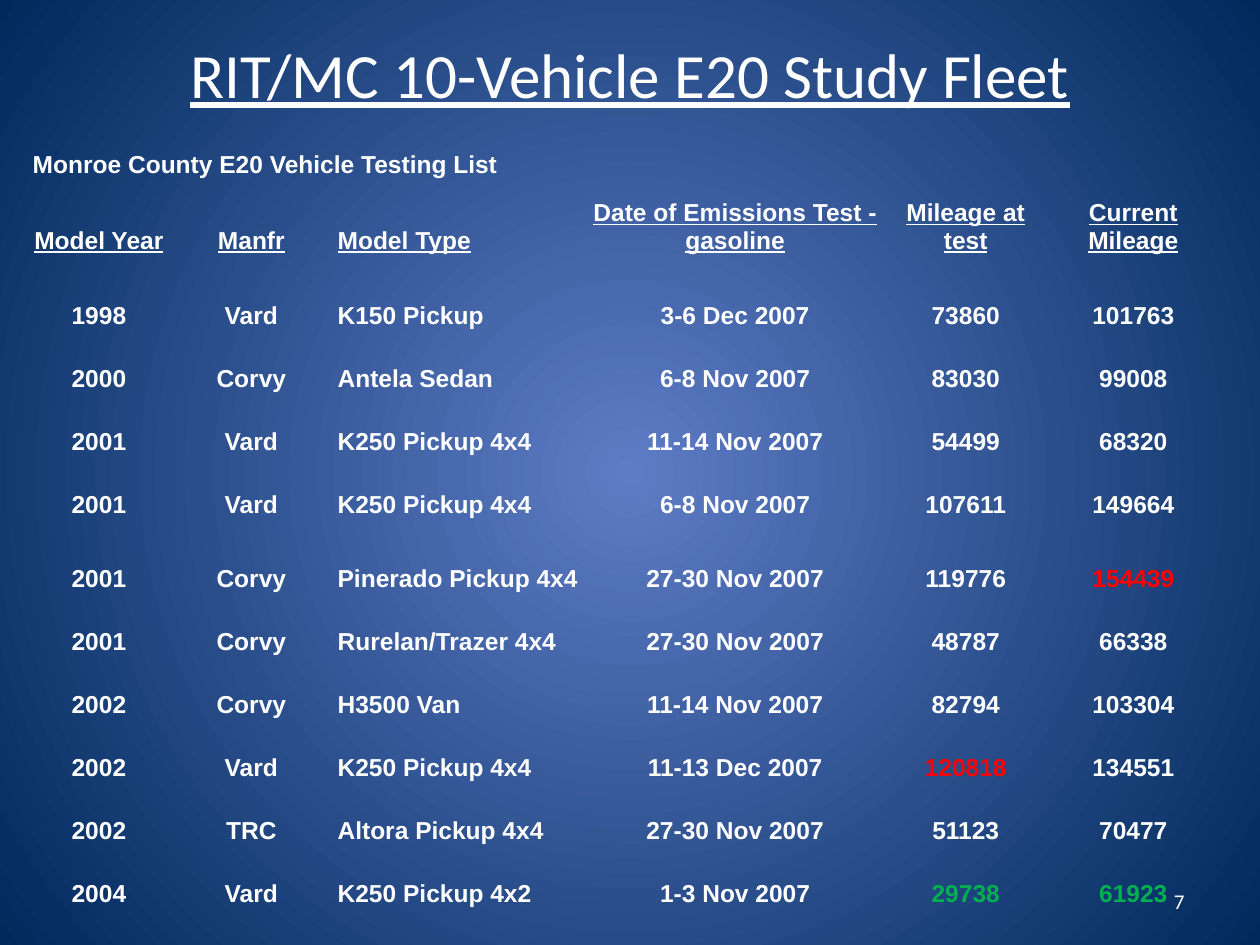
from lxml.etree import SubElement
from pptx import Presentation
from pptx.dml.color import RGBColor
from pptx.enum.text import MSO_ANCHOR, PP_ALIGN
from pptx.oxml.ns import qn
from pptx.util import Inches, Pt

THEME = {
    "white": "FFFFFF", "red": "FF0000", "green": "00B050",
    "centre": "5E7CC5", "edge": "00295C",
    "title_size": 36, "table_size": 14, "number_size": 12,
    "title_font": "Calibri", "table_font": "Arial",
}
NO_STYLE_NO_GRID = "{2D5ABB26-0587-4C30-8999-92F81FD0307C}"

HEADERS = ["Model Year", "Manfr", "Model Type", "Date of Emissions Test - gasoline",
           "Mileage at test", "Current Mileage"]
VEHICLES = [
    ["1998", "Vard", "K150 Pickup", "3-6 Dec 2007", "73860", "101763"],
    ["2000", "Corvy", "Antela Sedan", "6-8 Nov 2007", "83030", "99008"],
    ["2001", "Vard", "K250 Pickup 4x4", "11-14 Nov 2007", "54499", "68320"],
    ["2001", "Vard", "K250 Pickup 4x4", "6-8 Nov 2007", "107611", "149664"],
    ["2001", "Corvy", "Pinerado Pickup 4x4", "27-30 Nov 2007", "119776", "154439"],
    ["2001", "Corvy", "Rurelan/Trazer 4x4", "27-30 Nov 2007", "48787", "66338"],
    ["2002", "Corvy", "H3500 Van", "11-14 Nov 2007", "82794", "103304"],
    ["2002", "Vard", "K250 Pickup 4x4", "11-13 Dec 2007", "120818", "134551"],
    ["2002", "TRC", "Altora Pickup 4x4", "27-30 Nov 2007", "51123", "70477"],
    ["2004", "Vard", "K250 Pickup 4x2", "1-3 Nov 2007", "29738", "61923"],
]
HIGHLIGHTS = {"154439": "red", "120818": "red", "29738": "green", "61923": "green"}
COLUMN_WIDTHS = [1.07, 1.35, 2, 2.33, 1.33, 1.33]
ROW_HEIGHTS = [0.5, 0.6, 0.14, 0.35] + [0.5] * 3 + [0.59] + [0.5] * 5
HEADER_ROW = 1
MODEL_TYPE_COLUMN = 2


def write_text(frame, text, *, size, font, color="white", align=PP_ALIGN.CENTER,
               bold=False, underline=False):
    paragraph = frame.paragraphs[0]
    paragraph.alignment = align
    if not text:
        # The end mark sets the line height of an empty cell.
        SubElement(paragraph._p, qn("a:endParaRPr"), sz=str(size * 100))
        return
    run = paragraph.add_run()
    run.text = text
    run.font.size = Pt(size)
    run.font.name = font
    run.font.bold = bold
    run.font.underline = underline
    run.font.color.rgb = RGBColor.from_string(THEME[color])


presentation = Presentation()
presentation.slide_width, presentation.slide_height = Inches(10), Inches(7.5)
slide = presentation.slides.add_slide(presentation.slide_layouts[6])

# Radial background, light in the middle
background = slide.background.fill
background.gradient()
for stop, position, color in zip(background.gradient_stops, (0, 1), ("centre", "edge")):
    stop.position = position
    stop.color.rgb = RGBColor.from_string(THEME[color])
gradient = slide._element.find(".//" + qn("a:gradFill"))
gradient.remove(gradient.find(qn("a:lin")))
radial = SubElement(gradient, qn("a:path"), path="circle")
SubElement(radial, qn("a:fillToRect"), l="50000", t="50000", r="50000", b="50000")

# Vehicle table
table_shape = slide.shapes.add_table(
    len(ROW_HEIGHTS), len(COLUMN_WIDTHS), Inches(0.25), Inches(0.92),
    Inches(sum(COLUMN_WIDTHS)), Inches(sum(ROW_HEIGHTS)))
table = table_shape.table
table.first_row = table.horz_banding = False
table._tbl.tblPr.find(qn("a:tableStyleId")).text = NO_STYLE_NO_GRID
for column, width in zip(table.columns, COLUMN_WIDTHS):
    column.width = Inches(width)
for row, height in zip(table.rows, ROW_HEIGHTS):
    row.height = Inches(height)
table.cell(0, 0).merge(table.cell(0, 2))

empty_row = [""] * len(HEADERS)
caption_row = ["Monroe County E20 Vehicle Testing List"] + empty_row[1:]
for row_index, texts in enumerate([caption_row, HEADERS, empty_row, *VEHICLES]):
    for column_index, text in enumerate(texts):
        cell = table.cell(row_index, column_index)
        cell.fill.background()
        cell.vertical_anchor = MSO_ANCHOR.BOTTOM
        cell.margin_left = cell.margin_right = cell.margin_top = Inches(0.01)
        cell.margin_bottom = 0
        left_aligned = row_index == 0 or column_index == MODEL_TYPE_COLUMN
        write_text(cell.text_frame, text, size=THEME["table_size"],
                   font=THEME["table_font"], color=HIGHLIGHTS.get(text, "white"),
                   align=PP_ALIGN.LEFT if left_aligned else PP_ALIGN.CENTER,
                   bold=True, underline=row_index == HEADER_ROW)

# Title and slide number
for text, box, text_format in [
    ("RIT/MC 10-Vehicle E20 Study Fleet", (0.5, 0, 9, 1.17),
     {"size": THEME["title_size"], "underline": True}),
    ("7", (7.17, 6.95, 2.33, 0.4),
     {"size": THEME["number_size"], "align": PP_ALIGN.RIGHT}),
]:
    frame = slide.shapes.add_textbox(*map(Inches, box)).text_frame
    frame.word_wrap = True
    frame.vertical_anchor = MSO_ANCHOR.MIDDLE
    write_text(frame, text, font=THEME["title_font"], **text_format)

presentation.save("out.pptx")
